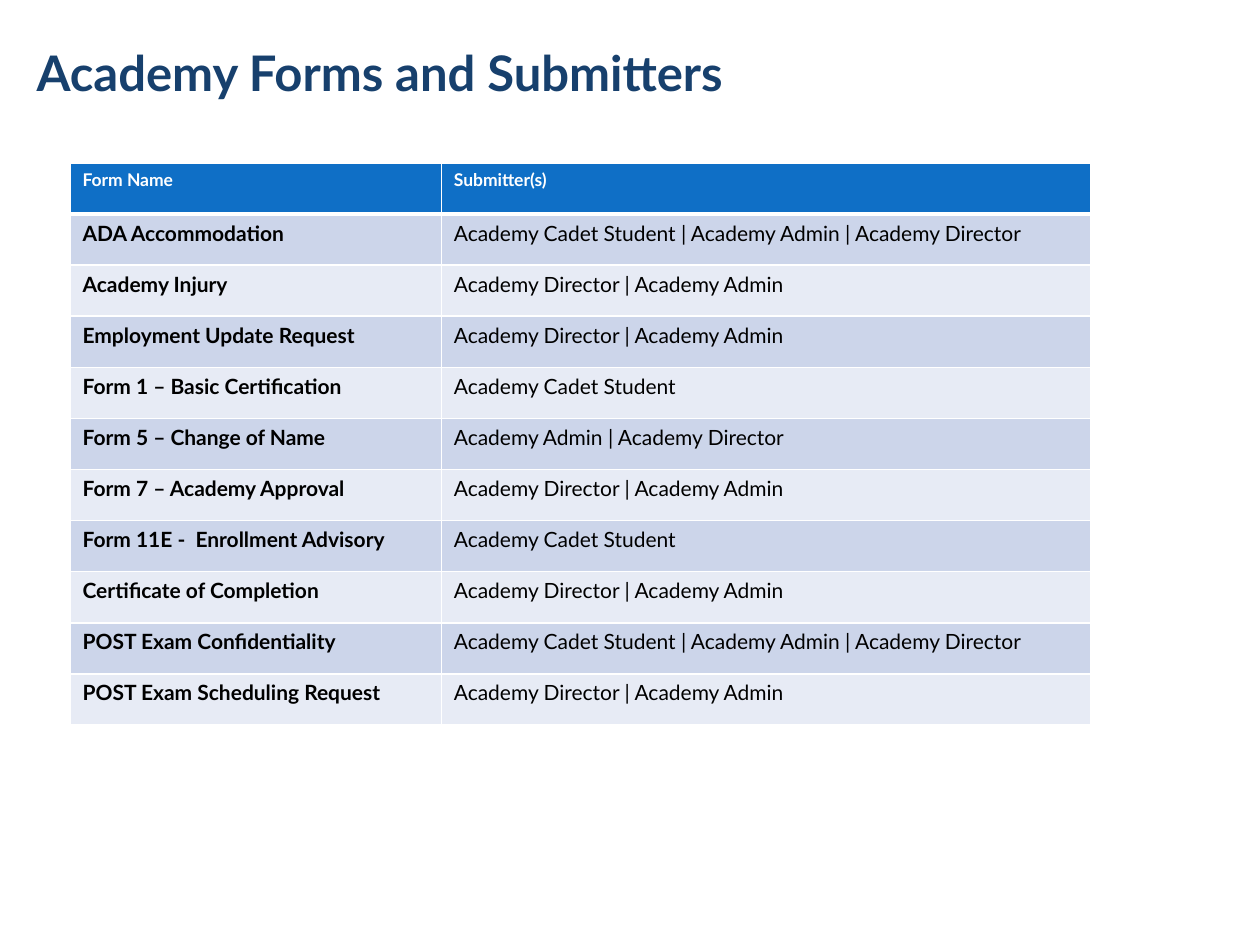
from lxml import etree
from pptx import Presentation
from pptx.dml.color import RGBColor
from pptx.enum.text import MSO_ANCHOR, PP_ALIGN
from pptx.oxml.ns import qn
from pptx.util import Pt

TOP, LEFT = MSO_ANCHOR.TOP, PP_ALIGN.LEFT

TITLE = "Academy Forms and Submitters"
HEADER = ("Form Name", "Submitter(s)")
FORMS = [
    ("ADA Accommodation", "Academy Cadet Student | Academy Admin | Academy Director"),
    ("Academy Injury", "Academy Director | Academy Admin"),
    ("Employment Update Request", "Academy Director | Academy Admin"),
    ("Form 1 – Basic Certification", "Academy Cadet Student"),
    ("Form 5 – Change of Name", "Academy Admin | Academy Director"),
    ("Form 7 – Academy Approval", "Academy Director | Academy Admin"),
    ("Form 11E -  Enrollment Advisory", "Academy Cadet Student"),
    ("Certificate of Completion", "Academy Director | Academy Admin"),
    ("POST Exam Confidentiality", "Academy Cadet Student | Academy Admin | Academy Director"),
    ("POST Exam Scheduling Request", "Academy Director | Academy Admin"),
]

FONT = "Lato"
NAVY = RGBColor(0x17, 0x40, 0x6D)
BLUE = RGBColor(0x0F, 0x6F, 0xC6)
WHITE = RGBColor(0xFF, 0xFF, 0xFF)
BLACK = RGBColor(0, 0, 0)
BANDS = (RGBColor(0xCC, 0xD5, 0xEA), RGBColor(0xE7, 0xEB, 0xF5))

TABLE_LEFT, TABLE_TOP = 40, 93.1
COLUMN_WIDTHS = (212.2, 371.2)
ROW_HEIGHT = 29.22


def format_text(paragraph, size, color, bold):
    for span in paragraph.runs:
        font = span.font
        font.name, font.size, font.bold = FONT, Pt(size), bold
        font.color.rgb = color


def set_borders(cell, top, bottom):
    """Draw white borders, with top and bottom widths in points."""
    properties = cell._tc.get_or_add_tcPr()
    widths = {"lnL": 1, "lnR": 1, "lnT": top, "lnB": bottom}
    for position, (side, width) in enumerate(widths.items()):
        line = etree.Element(qn(f"a:{side}"), w=str(Pt(width)))
        fill = etree.SubElement(line, qn("a:solidFill"))
        etree.SubElement(fill, qn("a:srgbClr"), val=str(WHITE))
        properties.insert(position, line)


def add_title(page):
    title = page.shapes.title
    title.left, title.top, title.width, title.height = Pt(13.7), Pt(24.5), Pt(620.6), Pt(54.7)
    frame = title.text_frame
    frame.text = TITLE
    frame.vertical_anchor = TOP
    paragraph = frame.paragraphs[0]
    paragraph.alignment = LEFT
    paragraph.line_spacing = 0.9
    format_text(paragraph, 28, NAVY, True)


def add_forms_table(page):
    rows = [HEADER, *FORMS]
    table = page.shapes.add_table(
        len(rows), len(HEADER), Pt(TABLE_LEFT), Pt(TABLE_TOP),
        Pt(sum(COLUMN_WIDTHS)), Pt(ROW_HEIGHT * len(rows))).table
    for column, width in zip(table.columns, COLUMN_WIDTHS):
        column.width = Pt(width)
    for row_index, texts in enumerate(rows):
        table.rows[row_index].height = Pt(ROW_HEIGHT)
        is_header = row_index == 0
        for column_index, text in enumerate(texts):
            cell = table.cell(row_index, column_index)
            cell.text = text
            cell.fill.solid()
            cell.fill.fore_color.rgb = BLUE if is_header else BANDS[(row_index - 1) % 2]
            set_borders(cell, top=3 if row_index == 1 else 1, bottom=3 if is_header else 1)
            format_text(cell.text_frame.paragraphs[0], 10 if is_header else 12,
                        WHITE if is_header else BLACK, is_header or column_index == 0)


def main():
    deck = Presentation()
    deck.slide_width, deck.slide_height = Pt(720), Pt(540)
    page = deck.slides.add_slide(deck.slide_layouts.get_by_name("Title Only"))
    add_title(page)
    add_forms_table(page)
    deck.save("out.pptx")


if __name__ == "__main__":
    main()
